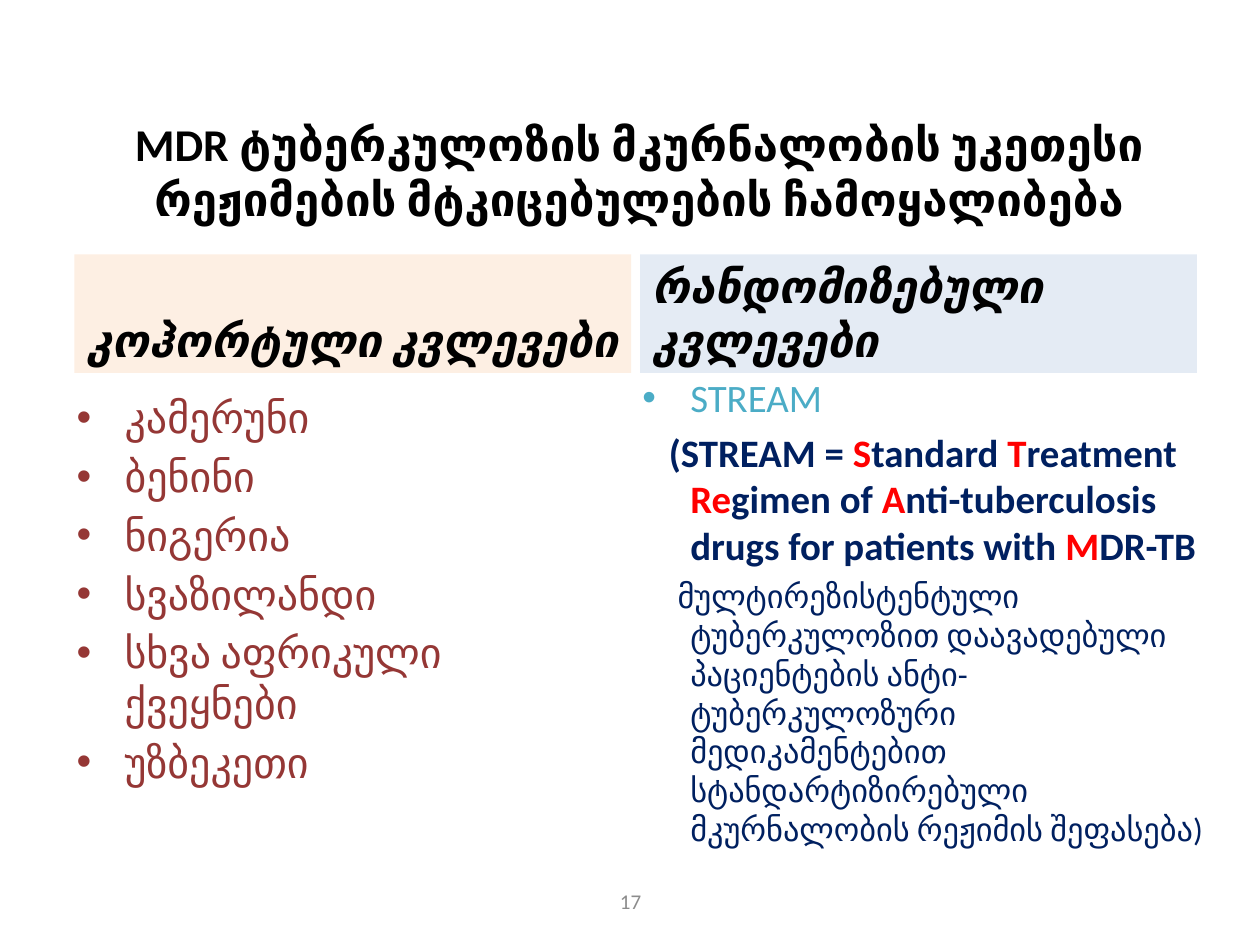
from dataclasses import dataclass

from lxml import etree
from pptx import Presentation
from pptx.dml.color import RGBColor
from pptx.enum.shapes import MSO_SHAPE
from pptx.enum.text import MSO_ANCHOR, PP_ALIGN
from pptx.oxml.ns import qn
from pptx.util import Inches, Pt

RECTANGLE = MSO_SHAPE.RECTANGLE
TOP, MIDDLE, BOTTOM = MSO_ANCHOR.TOP, MSO_ANCHOR.MIDDLE, MSO_ANCHOR.BOTTOM
LEFT, CENTER = PP_ALIGN.LEFT, PP_ALIGN.CENTER

SLIDE_WIDTH, SLIDE_HEIGHT = Inches(10), Inches(7.5)
COLUMNS, ROWS = 100, 75


@dataclass(frozen=True)
class Theme:
    font: str = "Calibri"
    black: str = "000000"
    country: str = "953735"
    trial: str = "4BACC6"
    navy: str = "002060"
    initial: str = "FF0000"
    footer: str = "8C8C8C"
    cohort_fill: str = "FAC090"
    randomized_fill: str = "95B3D7"
    fill_opacity: int = 25
    heading_size: float = 26
    country_size: float = 24
    trial_size: float = 22.2
    detail_size: float = 18.5
    footer_size: float = 12
    gap_share: float = 0.2
    hanging: float = 0.38


THEME = Theme()

COUNTRIES = ["კამერუნი", "ბენინი", "ნიგერია", "სვაზილანდი",
             "სხვა აფრიკული ქვეყნები", "უზბეკეთი"]

ACRONYM_PARTS = [
    ("(STREAM = ", False), ("S", True), ("tandard ", False),
    ("T", True), ("reatment ", False), ("Re", True), ("gimen of ", False),
    ("A", True), ("nti-tuberculosis drugs for patients with ", False),
    ("M", True), ("DR-TB", False),
]

EXPLANATION = ("მულტირეზისტენტული ტუბერკულოზით დაავადებული პაციენტების "
               "ანტი-ტუბერკულოზური მედიკამენტებით სტანდარტიზირებული "
               "მკურნალობის რეჟიმის შეფასება)")


def grid_box(column, row, width, height):
    return (int(SLIDE_WIDTH * column / COLUMNS), int(SLIDE_HEIGHT * row / ROWS),
            int(SLIDE_WIDTH * width / COLUMNS), int(SLIDE_HEIGHT * height / ROWS))


def set_frame(shape, anchor):
    frame = shape.text_frame
    frame.word_wrap = True
    frame.vertical_anchor = anchor
    return frame


def add_text_area(slide, cells, anchor=TOP):
    return set_frame(slide.shapes.add_textbox(*grid_box(*cells)), anchor)


def next_paragraph(frame, size, align=LEFT, spaced=True):
    first = frame.paragraphs[0]
    paragraph = frame.add_paragraph() if first.runs else first
    paragraph.alignment = align
    if spaced:
        paragraph.space_before = Pt(round(size * THEME.gap_share, 1))
    return paragraph


def add_run(paragraph, text, size, color, bold=False, italic=False):
    run = paragraph.add_run()
    run.text = text
    font = run.font
    font.name, font.size = THEME.font, Pt(size)
    font.bold, font.italic = bold, italic
    font.color.rgb = RGBColor.from_string(color)


def hang(paragraph, first_line=-THEME.hanging, bullet=None):
    properties = paragraph._p.get_or_add_pPr()
    properties.set("marL", str(Inches(THEME.hanging)))
    properties.set("indent", str(Inches(first_line)))
    if bullet:
        etree.SubElement(properties, qn("a:buFont"), typeface="Arial")
        etree.SubElement(properties, qn("a:buChar"), char=bullet)


def add_bullet(frame, text, size, color):
    paragraph = next_paragraph(frame, size)
    hang(paragraph, bullet="•")
    add_run(paragraph, text, size, color)


def add_centered_line(slide, cells, text, size, color, bold=False):
    frame = add_text_area(slide, cells, MIDDLE)
    paragraph = next_paragraph(frame, size, CENTER, spaced=False)
    add_run(paragraph, text, size, color, bold)


def add_column_heading(slide, column, text, fill):
    band = slide.shapes.add_shape(RECTANGLE, *grid_box(column, 20.2, 44.2, 9.4))
    band.shadow.inherit = False
    band.line.fill.background()
    band.fill.solid()
    band.fill.fore_color.rgb = RGBColor.from_string(fill)
    color = band._element.spPr.find(qn("a:solidFill"))[0]
    etree.SubElement(color, qn("a:alpha"), val=str(THEME.fill_opacity * 1000))
    size = THEME.heading_size
    paragraph = next_paragraph(set_frame(band, BOTTOM), size)
    add_run(paragraph, text, size, THEME.black, bold=True, italic=True)


def add_country_list(slide):
    countries = add_text_area(slide, (5.1, 30.6, 44.2, 39.3))
    for country in COUNTRIES:
        add_bullet(countries, country, THEME.country_size, THEME.country)


def add_trial_description(slide):
    description = add_text_area(slide, (50, 29.2, 46.5, 40.6))
    add_bullet(description, "STREAM", THEME.trial_size, THEME.trial)

    acronym = next_paragraph(description, THEME.trial_size)
    hang(acronym, first_line=-0.17)
    for text, is_initial in ACRONYM_PARTS:
        color = THEME.initial if is_initial else THEME.navy
        add_run(acronym, text, THEME.trial_size, color, bold=True)

    explanation = next_paragraph(description, THEME.trial_size)
    hang(explanation, first_line=-0.1)
    add_run(explanation, EXPLANATION, THEME.detail_size, THEME.navy)


def main():
    presentation = Presentation()
    presentation.slide_width = SLIDE_WIDTH
    presentation.slide_height = SLIDE_HEIGHT
    slide = presentation.slides.add_slide(presentation.slide_layouts[6])

    add_centered_line(
        slide, (5.1, 7.7, 91.3, 11.7),
        "MDR ტუბერკულოზის მკურნალობის უკეთესი რეჟიმების მტკიცებულების ჩამოყალიბება",
        THEME.heading_size, THEME.black, bold=True)
    add_column_heading(slide, 5.9, "კოჰორტული კვლევები", THEME.cohort_fill)
    add_column_heading(slide, 50.8, "რანდომიზებული კვლევები", THEME.randomized_fill)
    add_country_list(slide)
    add_trial_description(slide)
    add_centered_line(slide, (34.2, 69.5, 31.7, 4), "17",
                      THEME.footer_size, THEME.footer)

    presentation.save("out.pptx")


if __name__ == "__main__":
    main()
